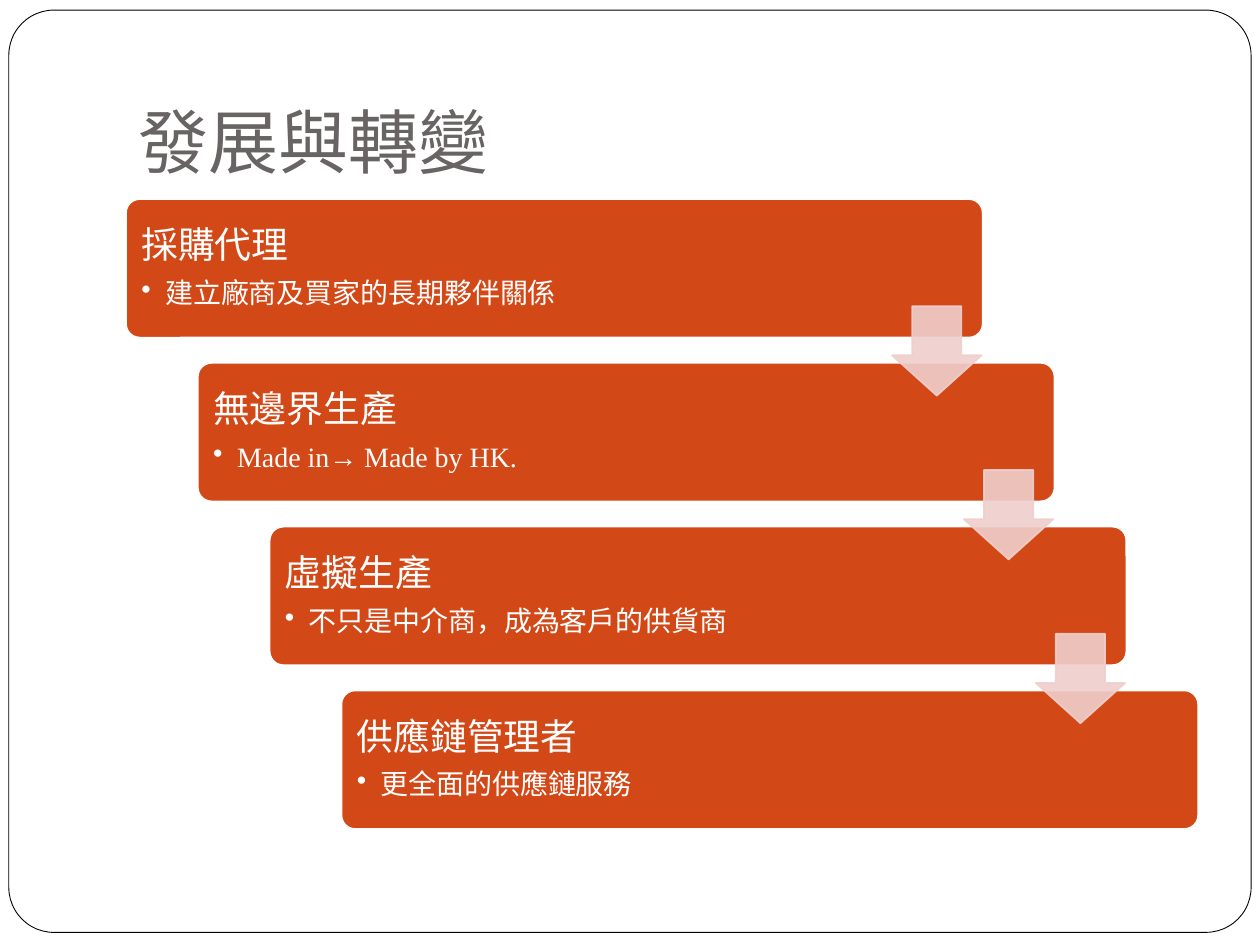
from lxml.etree import SubElement
from pptx import Presentation
from pptx.dml.color import RGBColor
from pptx.enum.shapes import MSO_SHAPE
from pptx.enum.text import MSO_ANCHOR, PP_ALIGN
from pptx.oxml.ns import qn
from pptx.util import Inches, Pt

STAGES = [
    ("採購代理", "建立廠商及買家的長期夥伴關係"),
    ("無邊界生產", "Made in→ Made by HK."),
    ("虛擬生產", "不只是中介商，成為客戶的供貨商"),
    ("供應鏈管理者", "更全面的供應鏈服務"),
]
STAGE_LEFT, STAGE_TOP, STAGE_WIDTH, STAGE_HEIGHT = 1, 1.58, 6.8, 1.1
STEP_X, STEP_Y = 0.57, 1.3
ARROW_LEFT, ARROW_TOP, ARROW_SIZE = 7.08, 2.43, 0.71
TEXT_WIDTH = 5.52
INSET = 0.09


def color(value):
    return RGBColor.from_string(value)


def add_shape(slide, kind, box, adjustments, fill, line, line_width):
    shape = slide.shapes.add_shape(kind, *map(Inches, box))
    shape.shadow.inherit = False
    for index, adjustment in enumerate(adjustments):
        shape.adjustments[index] = adjustment
    shape.fill.solid()
    shape.fill.fore_color.rgb = color(fill)
    shape.line.color.rgb = color(line)
    shape.line.width = Pt(line_width)
    return shape


def set_margins(text_frame, left, top, right, bottom):
    text_frame.margin_left = Inches(left)
    text_frame.margin_top = Inches(top)
    text_frame.margin_right = Inches(right)
    text_frame.margin_bottom = Inches(bottom)


def format_text(paragraph, font_name, size, font_color):
    paragraph.alignment = PP_ALIGN.LEFT
    for run in paragraph.runs:
        run.font.name = font_name
        run.font.size = Pt(size)
        run.font.color.rgb = color(font_color)


def add_bullet(paragraph):
    properties = paragraph._p.get_or_add_pPr()
    properties.set("marL", str(Inches(0.19)))
    properties.set("indent", str(Inches(-0.19)))
    SubElement(properties, qn("a:buChar")).set("char", "•")


def add_stage(slide, index, heading, detail):
    box = (STAGE_LEFT + index * STEP_X, STAGE_TOP + index * STEP_Y, STAGE_WIDTH, STAGE_HEIGHT)
    stage = add_shape(slide, MSO_SHAPE.ROUNDED_RECTANGLE, box, [0.1], "D34817", "FFFFFF", 1)
    text_frame = stage.text_frame
    text_frame.text = f"{heading}\n{detail}"
    text_frame.word_wrap = True
    text_frame.vertical_anchor = MSO_ANCHOR.MIDDLE
    set_margins(text_frame, INSET, INSET, STAGE_WIDTH - TEXT_WIDTH + INSET, INSET)
    for paragraph, size, space in zip(text_frame.paragraphs, (21, 16), (0.35, 0.15)):
        format_text(paragraph, "Times New Roman", size, "FFFFFF")
        paragraph.line_spacing = 0.9
        paragraph.space_after = Pt(round(size * space, 1))
    text_frame.paragraphs[1].level = 1
    add_bullet(text_frame.paragraphs[1])


def add_arrow(slide, index):
    box = (ARROW_LEFT + index * STEP_X, ARROW_TOP + index * STEP_Y, ARROW_SIZE, ARROW_SIZE)
    arrow = add_shape(slide, MSO_SHAPE.DOWN_ARROW, box, [0.55, 0.45], "EFCFCC", "EFCFCC", 1)
    for solid_color in arrow._element.spPr.iter(qn("a:srgbClr")):
        SubElement(solid_color, qn("a:alpha")).set("val", "90000")


def main():
    presentation = Presentation()
    presentation.slide_width = Inches(10)
    presentation.slide_height = Inches(7.5)
    slide = presentation.slides.add_slide(presentation.slide_layouts[5])

    frame = add_shape(slide, MSO_SHAPE.ROUNDED_RECTANGLE, (0.07, 0.08, 9.86, 7.32),
                      [0.049], "FFFFFF", "000000", 0.5)
    title = slide.shapes.title
    frame._element.addnext(title._element)
    title.left, title.top, title.width, title.height = map(Inches, (1, 0.3, 8.5, 1.25))
    title.text_frame.text = "發展與轉變"
    title.text_frame.vertical_anchor = MSO_ANCHOR.BOTTOM
    set_margins(title.text_frame, 0.1, 0.05, 0.1, 0.1)
    format_text(title.text_frame.paragraphs[0], "Karla", 40, "696464")

    for index, (heading, detail) in enumerate(STAGES):
        add_stage(slide, index, heading, detail)
    for index in range(len(STAGES) - 1):
        add_arrow(slide, index)

    presentation.save("out.pptx")


if __name__ == "__main__":
    main()
